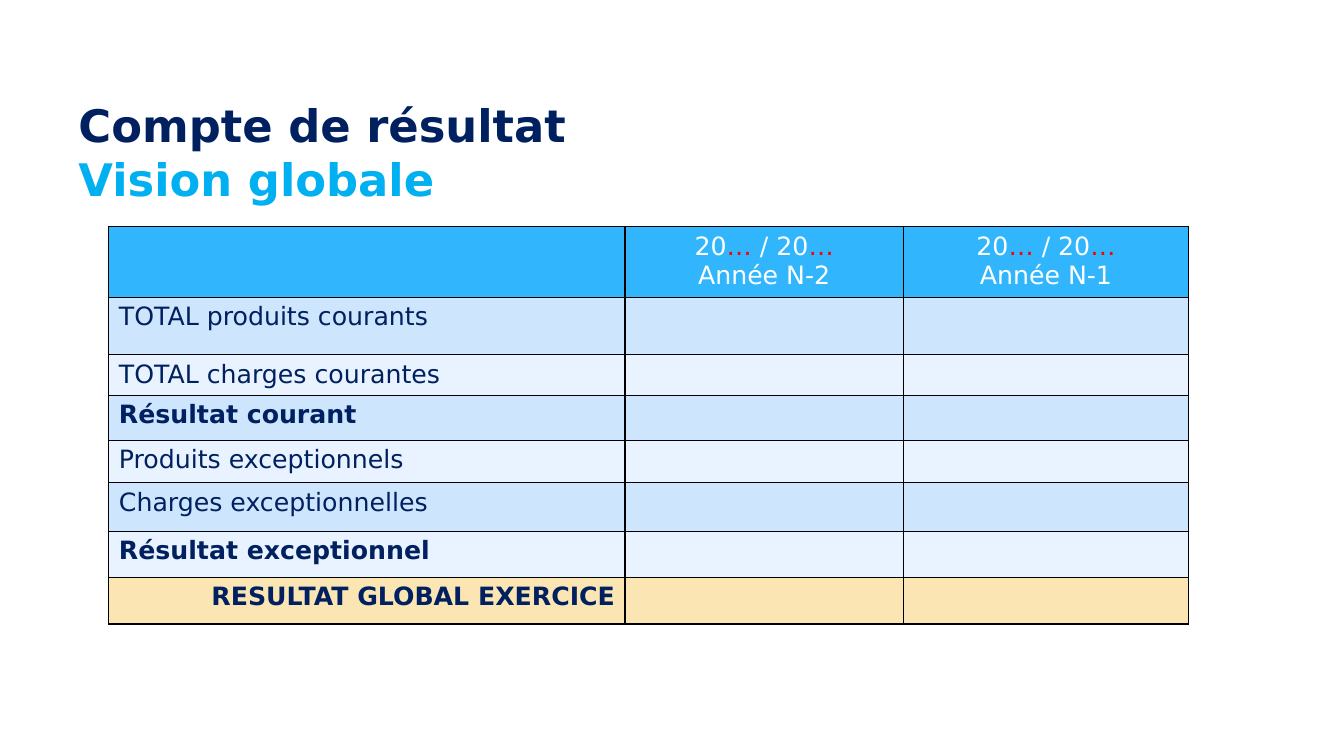
from lxml import etree
from pptx import Presentation
from pptx import util as u
from pptx.dml.color import RGBColor
from pptx.enum import text
from pptx.oxml.ns import qn

PX = 9144  # 100 px to the inch
FONT = "DejaVu Sans"
NAVY = RGBColor(0x00, 0x20, 0x60)
CYAN = RGBColor(0x00, 0xB0, 0xF0)
WHITE = RGBColor(0xFF, 0xFF, 0xFF)
RED = RGBColor(0xFF, 0x00, 0x00)
BLACK = RGBColor(0x00, 0x00, 0x00)
HEADER = RGBColor(0x31, 0xB6, 0xFD)
BANDS = (RGBColor(0xCE, 0xE5, 0xFE), RGBColor(0xE8, 0xF3, 0xFF))
TOTAL = RGBColor(0xFB, 0xE6, 0xB3)

COLUMNS = (512, 276, 283)
HEADER_HEIGHT = 57
YEARS = ("Année N-2", "Année N-1")
# label, bold, row height
ENTRIES = (
    ("TOTAL produits courants", False, 57),
    ("TOTAL charges courantes", False, 39),
    ("Résultat courant", True, 45),
    ("Produits exceptionnels", False, 42),
    ("Charges exceptionnelles", False, 48),
    ("Résultat exceptionnel", True, 46),
    ("RESULTAT GLOBAL EXERCICE", True, 46),
)


class Deck:
    def __init__(self, width, height):
        self.file = Presentation()
        self.file.slide_width, self.file.slide_height = width * PX, height * PX
        self.slide = self.file.slides.add_slide(self.file.slide_layouts[6])

    def run(self, paragraph, words, color, size=18, bold=False):
        run = paragraph.add_run()
        run.text = words
        run.font.color.rgb = color
        style = {"name": FONT, "size": u.Pt(size), "bold": bold}
        for key, value in style.items():
            setattr(run.font, key, value)

    def title(self, box, lines):
        frame = self.slide.shapes.add_textbox(*(n * PX for n in box)).text_frame
        frame.word_wrap = True
        frame.vertical_anchor = text.MSO_ANCHOR.TOP
        paragraph = frame.paragraphs[0]
        for index, (words, color) in enumerate(lines):
            if index:
                paragraph.add_line_break()
            self.run(paragraph, words, color, 32, True)

    def table(self, left, top, columns, rows):
        size = (left, top, sum(columns), sum(rows))
        frame = self.slide.shapes.add_table(
            len(rows), len(columns), *(n * PX for n in size))
        table = frame.table
        for column, width in zip(table.columns, columns):
            column.width = width * PX
        for row, height in zip(table.rows, rows):
            row.height = height * PX
        return table

    def fill_row(self, row, color):
        for cell in row.cells:
            self.border(cell)
            cell.fill.solid()
            cell.fill.fore_color.rgb = color

    def border(self, cell):
        """Rule all four sides; call before the fill, which must come after the lines."""
        properties = cell._tc.get_or_add_tcPr()
        for side in ("a:lnL", "a:lnR", "a:lnT", "a:lnB"):
            line = etree.SubElement(properties, qn(side), w=str(u.Pt(1)))
            solid = etree.SubElement(line, qn("a:solidFill"))
            etree.SubElement(solid, qn("a:srgbClr"), val=str(BLACK))


def main():
    deck = Deck(1333, 750)
    deck.title((68, 92, 1024, 87),
               (("Compte de résultat ", NAVY), ("Vision globale", CYAN)))

    heights = [HEADER_HEIGHT] + [height for _, _, height in ENTRIES]
    results = deck.table(108, 225, COLUMNS, heights)

    deck.fill_row(results.rows[0], HEADER)
    for column, year in enumerate(YEARS, 1):
        frame = results.cell(0, column).text_frame
        period, label = frame.paragraphs[0], frame.add_paragraph()
        period.alignment = label.alignment = text.PP_ALIGN.CENTER
        for words, color in (("20", WHITE), ("… ", RED), ("/ 20", WHITE), ("…", RED)):
            deck.run(period, words, color)
        deck.run(label, year, WHITE)

    for index, (label, bold, _) in enumerate(ENTRIES):
        is_total = index == len(ENTRIES) - 1
        deck.fill_row(results.rows[index + 1], TOTAL if is_total else BANDS[index % 2])
        paragraph = results.cell(index + 1, 0).text_frame.paragraphs[0]
        paragraph.alignment = text.PP_ALIGN.RIGHT if is_total else text.PP_ALIGN.LEFT
        deck.run(paragraph, label, NAVY, bold=bold)

    deck.file.save("out.pptx")


if __name__ == "__main__":
    main()
